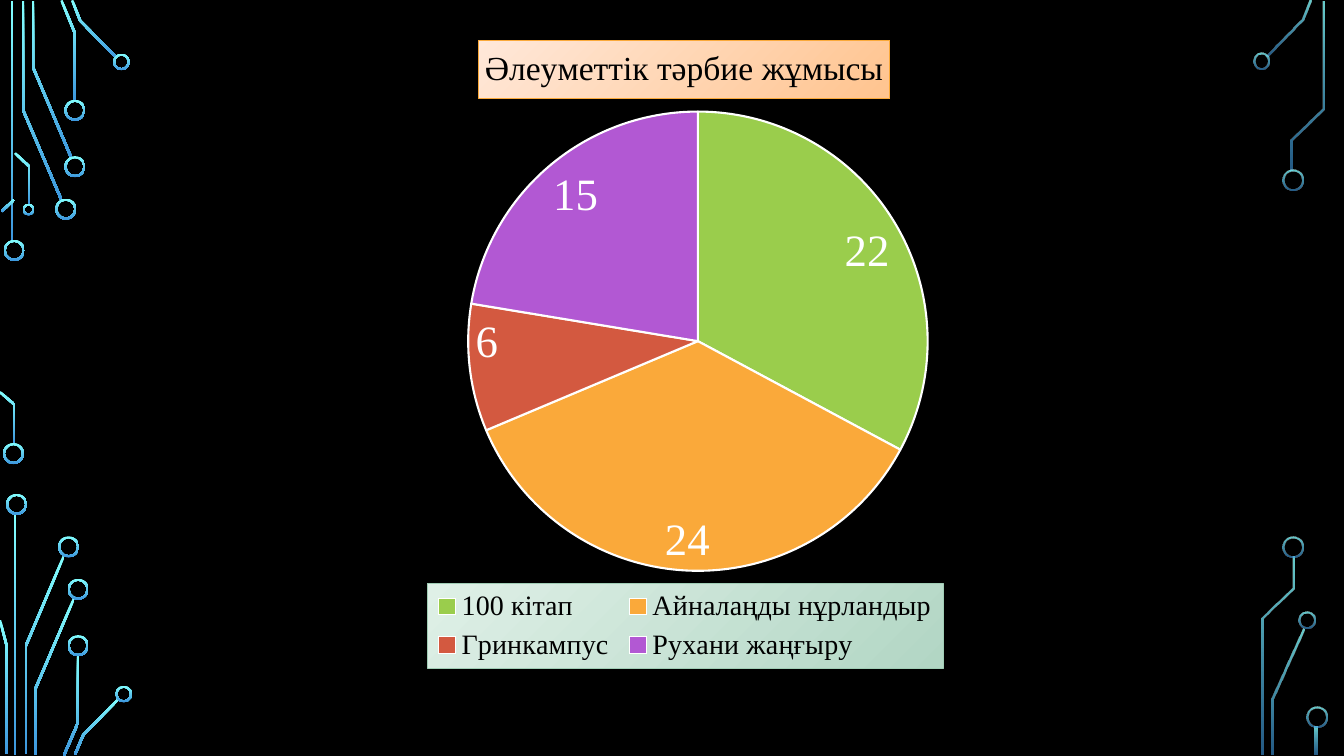
from dataclasses import dataclass
from math import hypot

from pptx import Presentation
from pptx.chart.data import CategoryChartData
from pptx.dml.color import RGBColor
from pptx.enum.chart import XL_CHART_TYPE as ChartType
from pptx.enum.chart import XL_LABEL_POSITION as LabelPosition
from pptx.enum.chart import XL_LEGEND_POSITION as LegendPosition
from pptx.enum.shapes import MSO_SHAPE as Preset
from pptx.oxml import parse_xml
from pptx.oxml.ns import nsdecls, qn
from pptx.util import Cm, Pt


@dataclass(frozen=True)
class Theme:
    font: str = "Times New Roman"
    background: str = "000000"
    dark_text: str = "000000"
    light_text: str = "FFFFFF"
    circuit: tuple = ("82FFFF", "3D97DE")
    title_panel: tuple = ("FFE8D9", "FFC48F")
    title_border: str = "FAA93A"
    legend_panel: tuple = ("DFF0E7", "B2D6C4")
    legend_border: str = "A0CDB5"
    title_size: int = 24
    legend_size: int = 20
    label_size: int = 32


THEME = Theme()
TRACE_WIDTH = 0.06
OPAQUE = (100, 100)
FADED = (80, 60)
LARGE, MEDIUM, SMALL = 0.53, 0.42, 0.3

SLICES = [
    ("100 кітап", 22, "9ACD4C"),
    ("Айналаңды нұрландыр", 24, "FAA93A"),
    ("Гринкампус", 6, "D35940"),
    ("Рухани жаңғыру", 15, "B258D3"),
]

LEFT_BARS = [(0.3, 0.03, 6.07), (0.38, 12.95, 6.07)]
LEFT_TRACES = [
    [(1.55, 5.04), (0.58, 2.77), (0.58, 0.03)],
    [(1.8, 3.98), (0.83, 1.69), (0.83, 0.03)],
    [(1.89, 2.54), (1.89, 0.84), (1.55, 0.01)],
    [(2.93, 1.45), (2.02, 0.52), (1.82, 0.01)],
    [(0.04, 5.33), (0.36, 5.03)],
    [(0.36, 11.2), (0.36, 10.19), (0, 9.88)],
    [(0.74, 5.16), (0.74, 4.2), (0.38, 3.86)],
    [(0.65, 19), (0.65, 16.28), (1.61, 14.01)],
    [(0.17, 19), (0.17, 16.28), (0, 15.63)],
    [(0.9, 19.02), (0.9, 17.34), (1.87, 15.07)],
    [(1.61, 19.04), (1.97, 18.21), (1.97, 16.51)],
    [(1.89, 19.01), (2.1, 18.52), (3, 17.6)],
]
LEFT_RINGS = [
    (0.36, 6.31, LARGE), (0.34, 11.43, LARGE), (1.66, 5.27, LARGE),
    (1.89, 4.2, LARGE), (1.89, 2.78, LARGE), (3.06, 1.56, MEDIUM),
    (0.72, 5.28, SMALL), (0.42, 12.71, LARGE), (1.73, 13.78, LARGE),
    (1.97, 14.85, LARGE), (1.97, 16.27, LARGE), (3.12, 17.49, MEDIUM),
]
RIGHT_BARS = [(33.17, 18.31, 0.71)]
RIGHT_TRACES = [
    [(31.93, 1.41), (32.83, 0.5), (33.03, 0.01)],
    [(32.07, 19.02), (32.07, 17.61), (32.84, 15.84)],
    [(32.56, 4.29), (32.56, 3.52), (33.34, 2.73), (33.34, 0.03)],
    [(31.81, 19.02), (31.81, 15.58), (32.6, 14.82), (32.6, 14.02)],
]
RIGHT_RINGS = [
    (31.79, 1.54, MEDIUM), (32.58, 4.53, LARGE), (32.93, 15.63, MEDIUM),
    (32.59, 13.78, LARGE), (33.18, 18.08, LARGE),
]


def rgb(color):
    return RGBColor.from_string(color)


def gradient_xml(colors, angle, alphas=OPAQUE):
    stops = "".join(
        f'<a:gs pos="{position}"><a:srgbClr val="{color}">'
        f'<a:alpha val="{alpha * 1000}"/></a:srgbClr></a:gs>'
        for position, color, alpha in zip((0, 100000), colors, alphas)
    )
    return (f'<a:gradFill {nsdecls("a")} rotWithShape="1"><a:gsLst>{stops}</a:gsLst>'
            f'<a:lin ang="{angle * 60000}" scaled="0"/></a:gradFill>')


def style_circuit(shape, alphas):
    shape.shadow.inherit = False
    shape.line.fill.background()
    shape.fill.background()
    properties = shape.element.spPr
    gradient = parse_xml(gradient_xml(THEME.circuit, 90, alphas))
    properties.replace(properties.find(qn("a:noFill")), gradient)


def segment_normal(start, end):
    dx, dy = end[0] - start[0], end[1] - start[1]
    length = hypot(dx, dy)
    return -dy / length, dx / length


def trace_outline(points):
    normals = [segment_normal(*pair) for pair in zip(points, points[1:])]
    left_side, right_side = [], []
    for (x, y), before, after in zip(points, normals[:1] + normals, normals + normals[-1:]):
        scale = TRACE_WIDTH / 2 / (1 + before[0] * after[0] + before[1] * after[1])
        dx, dy = scale * (before[0] + after[0]), scale * (before[1] + after[1])
        left_side.append((Cm(x + dx), Cm(y + dy)))
        right_side.append((Cm(x - dx), Cm(y - dy)))
    return left_side + right_side[::-1]


def add_bar(slide, center_x, top, height, alphas):
    left = Cm(center_x - TRACE_WIDTH / 2)
    bar = slide.shapes.add_shape(Preset.RECTANGLE, left, Cm(top), Cm(TRACE_WIDTH), Cm(height))
    style_circuit(bar, alphas)


def add_trace(slide, points, alphas):
    first, *others = trace_outline(points)
    builder = slide.shapes.build_freeform(*first)
    builder.add_line_segments(others, close=True)
    style_circuit(builder.convert_to_shape(), alphas)


def add_ring(slide, center_x, center_y, diameter, alphas):
    left, top = Cm(center_x - diameter / 2), Cm(center_y - diameter / 2)
    ring = slide.shapes.add_shape(Preset.DONUT, left, top, Cm(diameter), Cm(diameter))
    ring.adjustments[0] = 0.05 / diameter
    style_circuit(ring, alphas)


def add_circuit(slide, bars, traces, rings, alphas):
    for bar in bars:
        add_bar(slide, *bar, alphas)
    for points in traces:
        add_trace(slide, points, alphas)
    for ring in rings:
        add_ring(slide, *ring, alphas)


def place(element, target="", **fractions):
    for layout in element.findall(qn("c:layout")):
        element.remove(layout)
    modes = "".join(f'<c:{key}Mode val="edge"/>' for key in "xy")
    values = "".join(f'<c:{key} val="{value}"/>' for key, value in fractions.items())
    layout = parse_xml(f'<c:layout {nsdecls("c")}><c:manualLayout>{target}{modes}{values}'
                       f'</c:manualLayout></c:layout>')
    leading = [child for child in element if child.tag in (qn("c:tx"), qn("c:legendPos"))]
    element.insert(len(leading), layout)


def add_panel(element, colors, border):
    panel = parse_xml(
        f'<c:spPr {nsdecls("c", "a")}>{gradient_xml(colors, 45)}<a:ln w="6350">'
        f'<a:solidFill><a:srgbClr val="{border}"/></a:solidFill></a:ln></c:spPr>')
    text_properties = element.find(qn("c:txPr"))
    if text_properties is None:
        element.append(panel)
    else:
        text_properties.addprevious(panel)


def set_font(font, size, color):
    font.name = THEME.font
    font.size = Pt(size)
    font.bold = False
    font.color.rgb = rgb(color)


def format_title(chart):
    chart.has_title = True
    title = chart.chart_title
    paragraph = title.text_frame.paragraphs[0]
    paragraph.text = "Әлеуметтік тәрбие жұмысы"
    set_font(paragraph.font, THEME.title_size, THEME.dark_text)
    element = chart.element.find(".//" + qn("c:title"))
    place(element, x=0.34, y=0.03)
    add_panel(element, THEME.title_panel, THEME.title_border)


def format_legend(chart):
    chart.has_legend = True
    legend = chart.legend
    legend.position = LegendPosition.BOTTOM
    legend.include_in_layout = False
    set_font(legend.font, THEME.legend_size, THEME.dark_text)
    element = chart.element.find(".//" + qn("c:legend"))
    place(element, x=0.3, y=0.87, w=0.4, h=0.13)
    add_panel(element, THEME.legend_panel, THEME.legend_border)


def format_slices(plot):
    plot.vary_by_categories = True
    for index, (_, _, color) in enumerate(SLICES):
        wedge = plot.series[0].points[index].format
        wedge.fill.solid()
        wedge.fill.fore_color.rgb = rgb(color)
        wedge.line.color.rgb = rgb(THEME.light_text)
        wedge.line.width = Pt(1.5)
    plot.has_data_labels = True
    labels = plot.data_labels
    labels.show_value = True
    labels.show_percentage = False
    labels.position = LabelPosition.INSIDE_END
    set_font(labels.font, THEME.label_size, THEME.light_text)


def add_pie(slide):
    data = CategoryChartData()
    data.categories = [name for name, _, _ in SLICES]
    data.add_series("Series 1", [value for _, value, _ in SLICES])
    frame = slide.shapes.add_chart(ChartType.PIE, Cm(1.02), Cm(0.53), Cm(32.49), Cm(16.31), data)
    chart = frame.chart
    set_font(chart.font, 10, THEME.light_text)
    format_title(chart)
    format_legend(chart)
    format_slices(chart.plots[0])
    plot_area = chart.element.find(".//" + qn("c:plotArea"))
    place(plot_area, '<c:layoutTarget val="inner"/>', x=0.33, y=0.14, w=0.36, h=0.71)


def main():
    presentation = Presentation()
    presentation.slide_width, presentation.slide_height = Cm(33.87), Cm(19.05)
    slide = presentation.slides.add_slide(presentation.slide_layouts[6])
    slide.background.fill.solid()
    slide.background.fill.fore_color.rgb = rgb(THEME.background)
    add_circuit(slide, LEFT_BARS, LEFT_TRACES, LEFT_RINGS, OPAQUE)
    add_circuit(slide, RIGHT_BARS, RIGHT_TRACES, RIGHT_RINGS, FADED)
    add_pie(slide)
    presentation.save("out.pptx")


if __name__ == "__main__":
    main()
